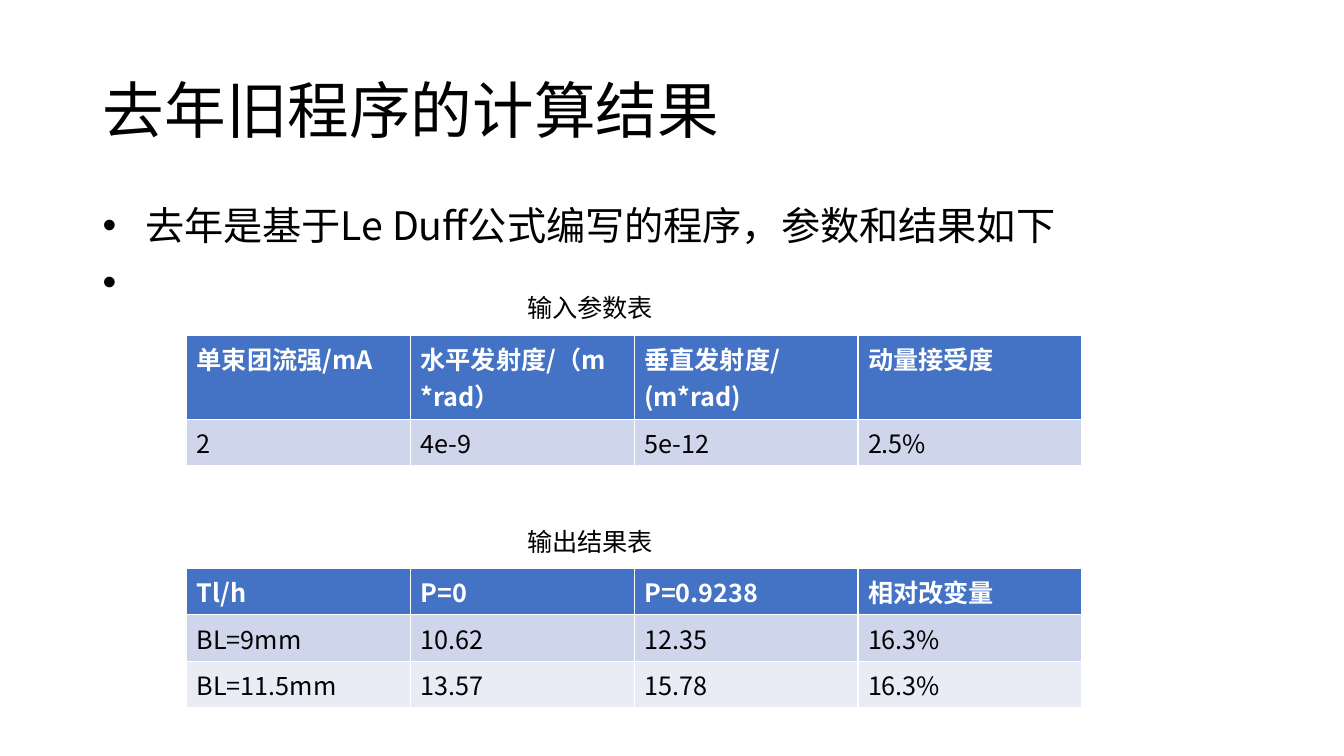
from dataclasses import dataclass

from lxml.etree import SubElement as Sub
from pptx import Presentation
from pptx.dml.color import RGBColor as Rgb
from pptx.enum.text import MSO_ANCHOR as Anchor, MSO_AUTO_SIZE as Fit, PP_ALIGN as Align
from pptx.oxml.ns import qn
from pptx.util import Inches, Pt

FONT = "Noto Sans CJK SC"
COLORS = {"text": "000000", "white": "FFFFFF", "head": "4472C4",
          "odd": "CFD5EA", "even": "E9EBF5"}
LEFT, COL = 1.85, 2.22
ROW = 0.46


@dataclass
class Grid:
    name: str
    top: float
    head: float
    rows: list[list[str]]
    label: tuple[float, float]  # top and width of the caption


GRIDS = [
    Grid("输入参数表", 3.33, 0.83, [
        ["单束团流强/mA", "水平发射度/（m *rad）", "垂直发射度/(m*rad)", "动量接受度"],
        ["2", "4e-9", "5e-12", "2.5%"],
    ], (2.85, 2.51)),
    Grid("输出结果表", 5.64, ROW, [
        ["Tl/h", "P=0", "P=0.9238", "相对改变量"],
        ["BL=9mm", "10.62", "12.35", "16.3%"],
        ["BL=11.5mm", "13.57", "15.78", "16.3%"],
    ], (5.17, 2.17)),
]


def write(para, text: str, size: float = 18, color: str = "text",
          bold: bool = False, line: float = 1, before: float = 0) -> None:
    para.alignment = Align.LEFT
    para.line_spacing = line
    para.space_before = Pt(before)
    run = para.add_run()
    run.text = text
    font = run.font
    font.size, font.bold, font.name = Pt(size), bold, FONT
    font.color.rgb = Rgb.from_string(COLORS[color])
    Sub(font._element, qn("a:ea"), typeface=FONT)


def bullet(para, indent: float) -> None:
    props = para._p.get_or_add_pPr()
    props.set("marL", str(Inches(indent)))
    props.set("indent", str(-Inches(indent)))
    Sub(props, qn("a:buFont"), typeface="Arial")
    Sub(props, qn("a:buChar"), char="•")


def add_box(slide, left: float, top: float, width: float, height: float):
    box = slide.shapes.add_textbox(*map(Inches, (left, top, width, height)))
    box.text_frame.word_wrap = True
    return box.text_frame


def add_title(slide, text: str) -> None:
    title = slide.shapes.title
    title.left, title.top = Inches(0.92), Inches(0.4)
    title.width, title.height = Inches(11.5), Inches(1.45)
    frame = title.text_frame
    frame.auto_size = Fit.NONE
    frame.vertical_anchor = Anchor.MIDDLE
    write(frame.paragraphs[0], text, size=44, line=0.9)


def add_body(slide) -> None:
    frame = add_box(slide, 0.92, 2, 11.5, 5.1)
    first, last = frame.paragraphs[0], frame.add_paragraph()
    # The last point holds one space so that its bullet shows
    for para, text in ((first, "去年是基于Le Duff公式编写的程序，参数和结果如下"), (last, " ")):
        write(para, text, size=28, line=0.9, before=10)
        bullet(para, 0.42)


def add_grid(slide, grid: Grid) -> None:
    count, cols = len(grid.rows), len(grid.rows[0])
    high = grid.head + ROW * (count - 1)
    table = slide.shapes.add_table(
        count, cols, *map(Inches, (LEFT, grid.top, COL * cols, high))).table
    for col in table.columns:
        col.width = Inches(COL)
    for r, row in enumerate(grid.rows):
        head = r == 0
        table.rows[r].height = Inches(grid.head if head else ROW)
        fill = "head" if head else "odd" if r % 2 else "even"
        for c, text in enumerate(row):
            cell = table.cell(r, c)
            cell.fill.solid()
            cell.fill.fore_color.rgb = Rgb.from_string(COLORS[fill])
            write(cell.text_frame.paragraphs[0], text, bold=head,
                  color="white" if head else "text")
    top, width = grid.label
    write(add_box(slide, 5.13, top, width, 0.4).paragraphs[0], grid.name)


def main() -> None:
    deck = Presentation()
    deck.slide_width, deck.slide_height = Inches(13.33), Inches(7.5)
    slide = deck.slides.add_slide(deck.slide_layouts[5])
    add_title(slide, "去年旧程序的计算结果")
    add_body(slide)
    for grid in GRIDS:
        add_grid(slide, grid)
    deck.save("out.pptx")


if __name__ == "__main__":
    main()
